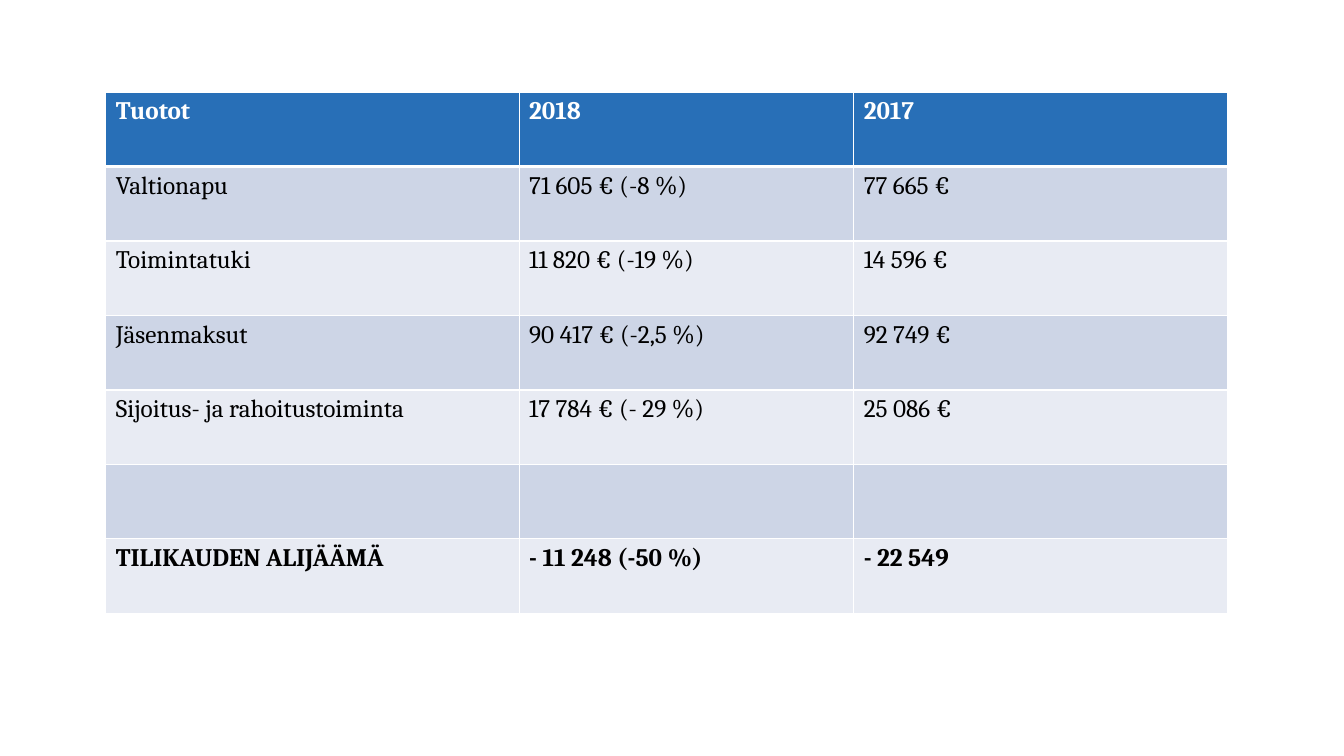
import pptx
import pptx.dml.color
import pptx.oxml
import pptx.oxml.ns
import pptx.util

Pt = pptx.util.Pt

FONT = "Cambria"
WHITE, BLACK = "FFFFFF", "000000"
HEADER_FILL = "286FB7"
BAND_FILLS = ("CDD5E6", "E8EBF3")

COL_WIDTHS = (295.2, 239.04, 267.12)
ROW_HEIGHT = 53.2
ROWS = [
    ("Tuotot", "2018", "2017"),
    ("Valtionapu", "71 605 € (-8 %)", "77 665 €"),
    ("Toimintatuki", "11 820 € (-19 %)", "14 596 €"),
    ("Jäsenmaksut", "90 417 € (-2,5 %)", "92 749 €"),
    ("Sijoitus- ja rahoitustoiminta", "17 784 € (- 29 %)", "25 086 €"),
    ("", "", ""),
    ("TILIKAUDEN ALIJÄÄMÄ", "- 11 248 (-50 %)", "- 22 549"),
]


def rgb(color):
    return pptx.dml.color.RGBColor.from_string(color)


def add_text(tf, text, size=18, color=BLACK, bold=False):
    r = tf.paragraphs[0].add_run()
    r.text = text
    r.font.name = FONT
    r.font.size = Pt(size)
    r.font.bold = bold
    r.font.color.rgb = rgb(color)


def set_borders(cell, top=1, bottom=1):
    tc_pr = cell._tc.get_or_add_tcPr()
    for side, width in (("L", 1), ("R", 1), ("T", top), ("B", bottom)):
        tc_pr.append(pptx.oxml.parse_xml(
            f'<a:ln{side} {pptx.oxml.ns.nsdecls("a")} w="{Pt(width)}">'
            f'<a:solidFill><a:srgbClr val="{WHITE}"/></a:solidFill></a:ln{side}>'))


def add_income_table(slide, left, top):
    table = slide.shapes.add_table(
        len(ROWS), len(COL_WIDTHS), Pt(left), Pt(top),
        Pt(sum(COL_WIDTHS)), Pt(ROW_HEIGHT * len(ROWS))).table
    for column, width in zip(table.columns, COL_WIDTHS):
        column.width = Pt(width)

    for i, texts in enumerate(ROWS):
        table.rows[i].height = Pt(ROW_HEIGHT)
        header, total = i == 0, i == len(ROWS) - 1
        fill = HEADER_FILL if header else BAND_FILLS[(i - 1) % 2]
        for j, text in enumerate(texts):
            cell = table.cell(i, j)
            # A thick rule separates the header from the body
            set_borders(cell, top=3 if i == 1 else 1, bottom=3 if header else 1)
            cell.fill.solid()
            cell.fill.fore_color.rgb = rgb(fill)
            if text:
                add_text(cell.text_frame, text, bold=header or total,
                         color=WHITE if header else BLACK)


def main():
    prs = pptx.Presentation()
    prs.slide_width, prs.slide_height = Pt(960), Pt(540)
    slide = prs.slides.add_slide(prs.slide_layouts[6])

    # Income by source and the result for the year
    add_income_table(slide, left=75.6, top=65.8)

    prs.save("out.pptx")


if __name__ == "__main__":
    main()
